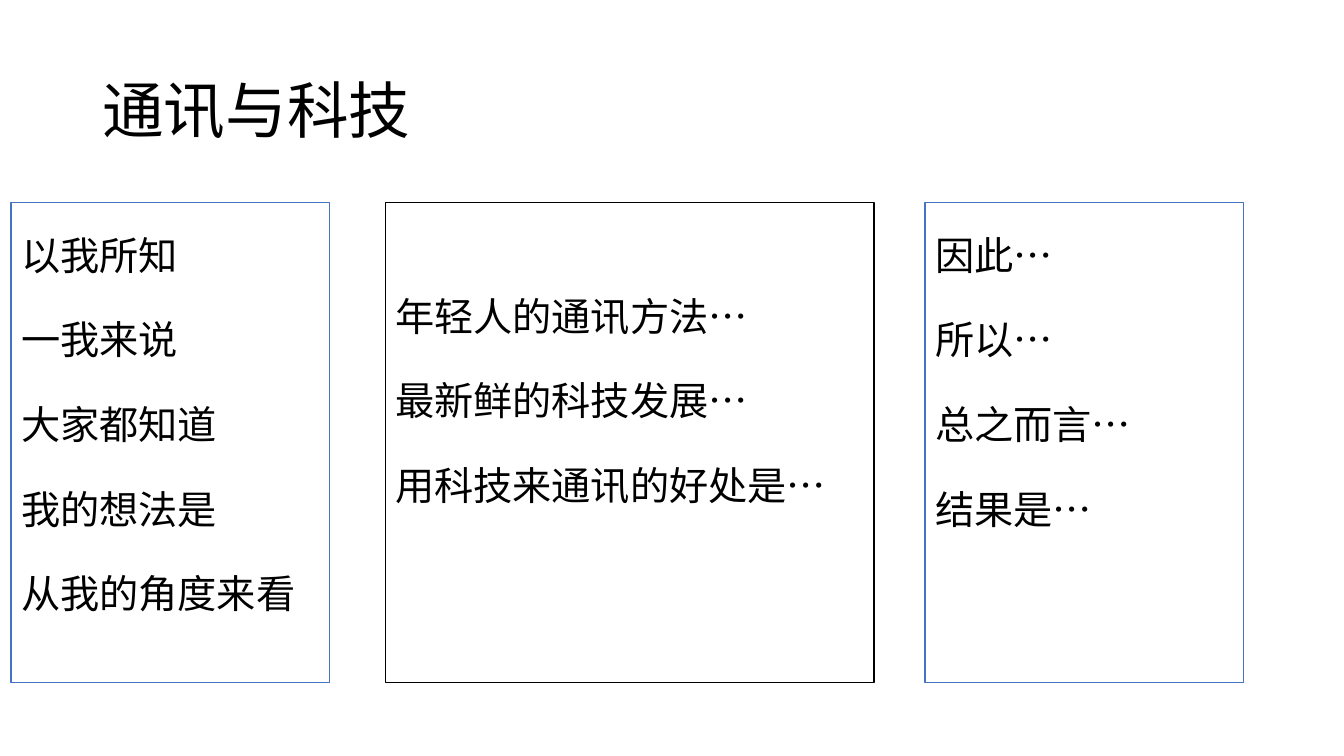
from pptx import Presentation
from pptx import util as u
from pptx.dml.color import RGBColor
from pptx.enum import lang, shapes, text

BLACK = RGBColor(0x00, 0x00, 0x00)
WHITE = RGBColor(0xFF, 0xFF, 0xFF)
BLUE = RGBColor(0x44, 0x72, 0xC4)

COLUMNS, ROWS = 120, 75
PANEL_TOP, PANEL_HEIGHT = 20.1, 47.6
TITLE_STYLE = {"line_spacing": 0.9}
PHRASE_STYLE = {"line_spacing": 1.5, "space_before": u.Pt(10)}

PANELS = [
    (1, 28.45, BLUE, 0.5,
     ["以我所知", "一我来说", "大家都知道", "我的想法是", "从我的角度来看"]),
    (34.4, 43.65, BLACK, 6.55,
     ["年轻人的通讯方法…", "最新鲜的科技发展…", "用科技来通讯的好处是…"]),
    (82.6, 28.45, BLUE, 0.5,
     ["因此…", "所以…", "总之而言…", "结果是…"]),
]


class PhraseSlide:
    """Places text and framed panels on a grid of columns and rows."""

    def __init__(self, deck):
        self.column = deck.slide_width / COLUMNS
        self.row = deck.slide_height / ROWS
        self.page = deck.slides.add_slide(deck.slide_layouts[6])
        self.font = {
            "name": "Calibri",
            "language_id": lang.MSO_LANGUAGE_ID.SIMPLIFIED_CHINESE,
        }

    def area(self, left, top, width, height):
        return (round(left * self.column), round(top * self.row),
                round(width * self.column), round(height * self.row))

    def apply(self, target, values):
        for name, value in values.items():
            setattr(target, name, value)

    def add_lines(self, box, lines, size, style, frame):
        self.apply(box.text_frame, {"word_wrap": True, **frame})
        for index, line in enumerate(lines):
            paras = box.text_frame.paragraphs
            para = box.text_frame.add_paragraph() if index else paras[0]
            self.apply(para, {"alignment": text.PP_ALIGN.LEFT, **style})
            span = para.add_run()
            span.text = line
            self.apply(span.font, {**self.font, "size": u.Pt(size)})
            span.font.color.rgb = BLACK

    def title(self, wording, *place):
        box = self.page.shapes.add_textbox(*self.area(*place))
        self.add_lines(box, [wording], 44, TITLE_STYLE,
                       {"vertical_anchor": text.MSO_ANCHOR.MIDDLE})

    def panel(self, left, width, border, inset, phrases):
        box = self.page.shapes.add_shape(
            shapes.MSO_SHAPE.RECTANGLE,
            *self.area(left, PANEL_TOP, width, PANEL_HEIGHT))
        box.shadow.inherit = False
        box.fill.solid()
        box.fill.fore_color.rgb = WHITE
        box.line.color.rgb = border
        box.line.width = u.Pt(1)
        self.add_lines(box, phrases, 28, PHRASE_STYLE,
                       {"vertical_anchor": text.MSO_ANCHOR.TOP,
                        "margin_top": round(inset * self.row)})


def main():
    deck = Presentation()
    deck.slide_width, deck.slide_height = u.Inches(13.33), u.Inches(7.5)
    slide = PhraseSlide(deck)
    slide.title("通讯与科技", 8.25, 4, 103.5, 14.5)
    for panel in PANELS:
        slide.panel(*panel)
    deck.save("out.pptx")


if __name__ == "__main__":
    main()
